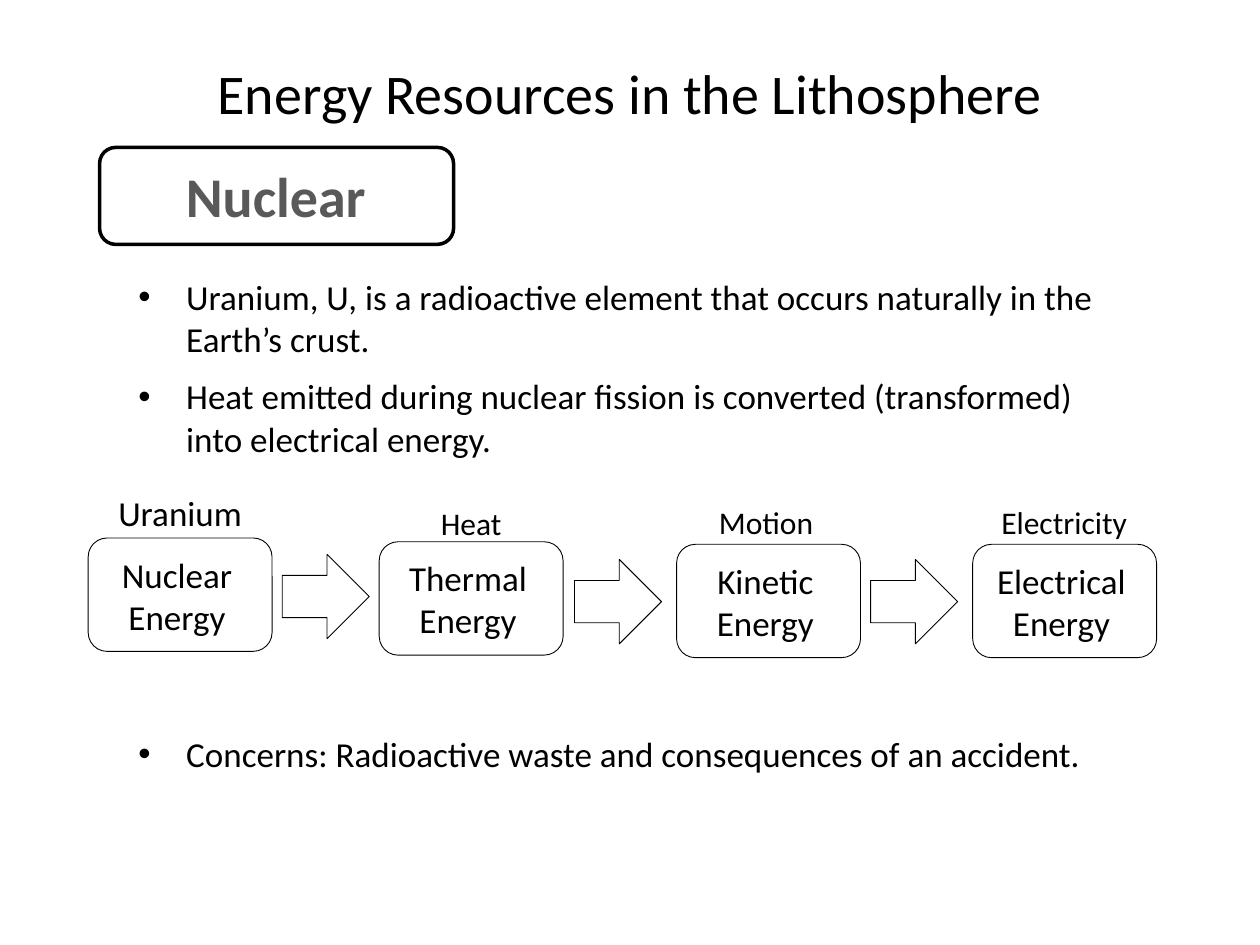
from lxml import etree
from pptx import Presentation
from pptx.dml.color import RGBColor
from pptx.enum.shapes import MSO_SHAPE
from pptx.enum.text import MSO_ANCHOR, PP_ALIGN
from pptx.oxml.ns import qn
from pptx.util import Inches, Pt

ROUND, ARROW = MSO_SHAPE.ROUNDED_RECTANGLE, MSO_SHAPE.RIGHT_ARROW
TOP, MIDDLE = MSO_ANCHOR.TOP, MSO_ANCHOR.MIDDLE
LEFT, CENTER = PP_ALIGN.LEFT, PP_ALIGN.CENTER

TITLE = "Energy Resources in the Lithosphere"
TOPIC = "Nuclear"
POINTS = [
    (2.04, "Uranium, U, is a radioactive element that occurs naturally in the Earth’s crust."),
    (2.83, "Heat emitted during nuclear fission is converted (transformed) into electrical energy."),
    (5.5, "Concerns: Radioactive waste and consequences of an accident."),
]
STAGES = [
    (0.7, 4.27, "Nuclear Energy"),
    (3.01, 4.3, "Thermal Energy"),
    (5.37, 4.32, "Kinetic Energy"),
    (7.72, 4.32, "Electrical\vEnergy"),
]
LABELS = [
    ("Uranium", (0.7, 3.77, 1.46, 0.6), 20),
    ("Heat", (2.97, 3.86, 1.54, 0.58), 18),
    ("Motion", (5.31, 3.85, 1.54, 0.58), 18),
    ("Electricity", (7.72, 3.85, 1.45, 0.58), 18),
]
ARROWS = [(2.24, 4.4), (4.56, 4.44), (6.91, 4.44)]


def paint(target, color):
    """Set a colour from a hex string."""
    target.rgb = RGBColor.from_string(color)


def write(box, text, size=20, color="000000", bold=False, align=CENTER,
          anchor=MIDDLE, wrap=True, bullet=False):
    """Fill a shape with one formatted paragraph."""
    frame = box.text_frame
    frame.text = text
    frame.word_wrap = wrap
    frame.vertical_anchor = anchor
    para = frame.paragraphs[0]
    para.alignment = align
    font = para.runs[0].font
    for run in para.runs:
        font = run.font
        font.name, font.size, font.bold = "Calibri", Pt(size), bold
        paint(font.color, color)
    if bullet:
        props = para._p.get_or_add_pPr()
        props.set("marL", str(Inches(0.38)))
        props.set("indent", str(-Inches(0.38)))
        etree.SubElement(props, qn("a:buFont")).set("typeface", "Arial")
        etree.SubElement(props, qn("a:buChar")).set("char", "•")


def add_text(shapes, place, text, **style):
    """Add a text box at a place given in inches."""
    write(shapes.add_textbox(*map(Inches, place)), text, **style)


def outline(shapes, kind, place, width=0.5):
    """Add an unfilled shape with a black line."""
    shape = shapes.add_shape(kind, *map(Inches, place))
    shape.shadow.inherit = False
    shape.fill.background()
    paint(shape.line.color, "000000")
    shape.line.width = Pt(width)


def main():
    """Build and save the slide."""
    deck = Presentation()
    deck.slide_width, deck.slide_height = Inches(10), Inches(7.5)
    slide = deck.slides.add_slide(deck.slide_layouts[5])
    shapes = slide.shapes

    title = shapes.title
    title.left, title.top = Inches(0.5), Inches(0.3)
    title.width, title.height = Inches(9), Inches(0.87)
    write(title, TITLE, size=32)

    outline(shapes, ROUND, (0.79, 1.17, 2.81, 0.77), width=2)
    add_text(shapes, (1.37, 1.23, 1.64, 0.64), TOPIC, size=32,
             color="595959", bold=True, anchor=TOP, wrap=False)

    for top, text in POINTS:
        add_text(shapes, (1, top, 8, 0.96), text, align=LEFT, bullet=True)
    for left, top, text in STAGES:
        group = shapes.add_group_shape().shapes
        outline(group, ROUND, (left, top, 1.46, 0.9))
        add_text(group, (left + 0.04, top + 0.07, 1.33, 0.77), text, anchor=TOP)
    for text, place, size in LABELS:
        add_text(shapes, place, text, size=size)
    for left, top in ARROWS:
        outline(shapes, ARROW, (left, top, 0.69, 0.67))

    deck.save("out.pptx")


if __name__ == "__main__":
    main()
